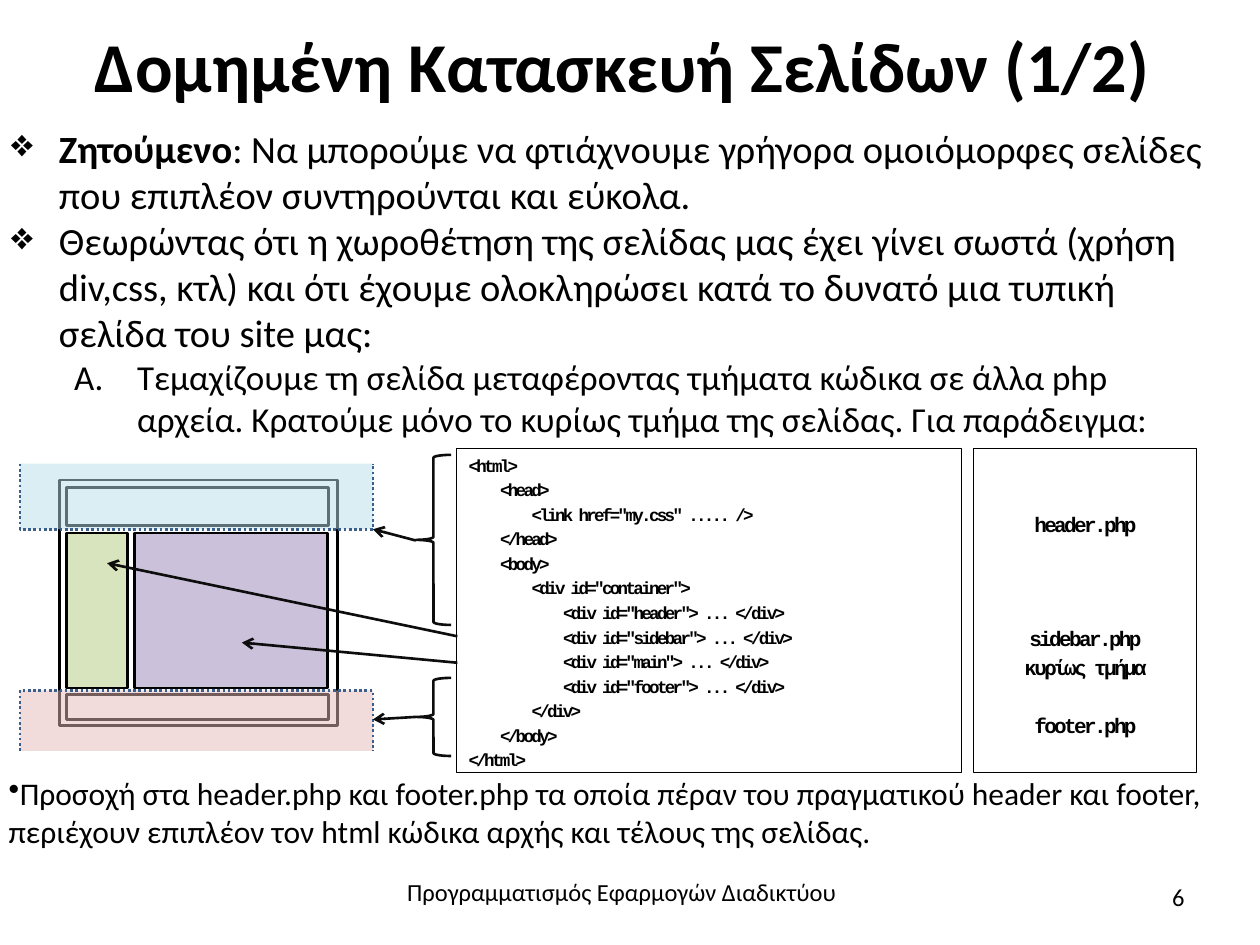
from lxml import etree
from pptx import Presentation
from pptx.dml.color import RGBColor
from pptx.enum.dml import MSO_LINE
from pptx.enum.shapes import MSO_CONNECTOR, MSO_SHAPE
from pptx.enum.text import MSO_ANCHOR, PP_ALIGN
from pptx.oxml.ns import qn
from pptx.util import Inches, Pt

BLACK = RGBColor(0x00, 0x00, 0x00)
WHITE = RGBColor(0xFF, 0xFF, 0xFF)
INK = RGBColor(0x0D, 0x0D, 0x0D)
GREEN = RGBColor(0xD7, 0xE4, 0xBD)
PURPLE = RGBColor(0xCC, 0xC1, 0xDA)
AQUA = RGBColor(0xB7, 0xDE, 0xE8)
ROSE = RGBColor(0xE6, 0xB9, 0xB8)
DOTTED_BLUE = RGBColor(0x3A, 0x5F, 0x8C)

LEFT, CENTER, RIGHT, JUSTIFY = (
    PP_ALIGN.LEFT, PP_ALIGN.CENTER, PP_ALIGN.RIGHT, PP_ALIGN.JUSTIFY)
TOP, MIDDLE = MSO_ANCHOR.TOP, MSO_ANCHOR.MIDDLE
RECTANGLE, LEFT_BRACE = MSO_SHAPE.RECTANGLE, MSO_SHAPE.LEFT_BRACE
STRAIGHT = MSO_CONNECTOR.STRAIGHT
SYSTEM_DOT = MSO_LINE.ROUND_DOT

TEXT_FONT = "Calibri"
CODE_FONT = "Courier New"

CODE = (
    (0, "<html>"),
    (1, "<head>"),
    (2, '<link href="my.css" ..... />'),
    (1, "</head>"),
    (1, "<body>"),
    (2, '<div id="container">'),
    (3, '<div id="header"> ... </div>'),
    (3, '<div id="sidebar"> ... </div>'),
    (3, '<div id="main"> ... </div>'),
    (3, '<div id="footer"> ... </div>'),
    (2, "</div>"),
    (1, "</body>"),
    (0, "</html>"),
)
# File name and the space before it, in points
FILES = (("header.php", 0), ("sidebar.php", 49),
         ("κυρίως τμήμα", 0), ("footer.php", 16.5))


class SlideBuilder:
    line_width = Pt(1.5)
    code_spacing = -150
    code_gap = Pt(2)

    def __init__(self, slide):
        self.slide = slide
        self.shapes = slide.shapes

    def text_box(self, left, top, width, height, anchor=TOP):
        box = self.shapes.add_textbox(
            Inches(left), Inches(top), Inches(width), Inches(height))
        frame = box.text_frame
        frame.word_wrap = True
        frame.vertical_anchor = anchor
        return frame

    def paragraph(self, frame, align=LEFT):
        first = frame.paragraphs[0]
        paragraph = frame.add_paragraph() if first.runs else first
        paragraph.alignment = align
        return paragraph

    def run(self, paragraph, text, size, bold=False, font=TEXT_FONT):
        run = paragraph.add_run()
        run.text = text
        run.font.size = Pt(size)
        run.font.bold = bold
        run.font.name = font
        run.font.color.rgb = BLACK
        return run

    def bullet(self, paragraph, tag, attribute, value, margin=0, indent=0):
        properties = paragraph._p.get_or_add_pPr()
        properties.set("marL", str(Inches(margin)))
        properties.set("indent", str(Inches(indent)))
        etree.SubElement(properties, qn(tag)).set(attribute, value)

    def code_line(self, frame, text, size, align):
        paragraph = self.paragraph(frame, align)
        paragraph.space_after = self.code_gap
        tabs = etree.SubElement(paragraph._p.get_or_add_pPr(), qn("a:tabLst"))
        for step in range(1, 4):
            tab = etree.SubElement(tabs, qn("a:tab"))
            tab.set("pos", str(Inches(0.25 * step)))
            tab.set("algn", "l")
        run = self.run(paragraph, text, size, True, CODE_FONT)
        run.font._element.set("spc", str(self.code_spacing))
        return paragraph

    def shape(self, kind, left, top, width, height, fill=None, line=BLACK,
              line_width=None):
        shape = self.shapes.add_shape(
            kind, Inches(left), Inches(top), Inches(width), Inches(height))
        shape.shadow.inherit = False
        if fill is None:
            shape.fill.background()
        else:
            shape.fill.solid()
            shape.fill.fore_color.rgb = fill
        shape.line.color.rgb = line
        shape.line.width = line_width or self.line_width
        return shape

    def panel(self, left, width):
        shape = self.shape(RECTANGLE, left, 3.56, width, 2.57, WHITE,
                           line_width=Pt(0.5))
        frame = shape.text_frame
        frame.word_wrap = True
        frame.vertical_anchor = TOP
        return frame

    def overlay(self, points, fill):
        start, *rest = [(Inches(x), Inches(y)) for x, y in points]
        builder = self.shapes.build_freeform(*start)
        builder.add_line_segments(rest, close=False)
        shape = builder.convert_to_shape()
        shape.shadow.inherit = False
        shape.fill.solid()
        shape.fill.fore_color.rgb = fill
        color = shape._element.spPr.find(qn("a:solidFill"))[0]
        etree.SubElement(color, qn("a:alpha")).set("val", "50000")
        shape.line.color.rgb = DOTTED_BLUE
        shape.line.width = self.line_width
        shape.line.dash_style = SYSTEM_DOT

    def arrow(self, start, end):
        connector = self.shapes.add_connector(
            STRAIGHT, *(Inches(value) for value in (*start, *end)))
        connector.line.color.rgb = INK
        connector.line.width = self.line_width
        line = connector.line._get_or_add_ln()
        etree.SubElement(line, qn("a:tailEnd")).set("type", "arrow")
        etree.SubElement(connector._element.spPr, qn("a:effectLst"))


def main():
    presentation = Presentation()
    presentation.slide_width = Inches(10)
    presentation.slide_height = Inches(7.5)
    slide = presentation.slides.add_slide(presentation.slide_layouts[6])
    builder = SlideBuilder(slide)

    # Title
    title = builder.text_box(0.5, 0, 9, 1.03, MIDDLE)
    builder.run(builder.paragraph(title, CENTER),
                "Δομημένη Κατασκευή Σελίδων (1/2) ", 40, True)

    # Main points
    body = builder.text_box(-0.01, 0.94, 9.8, 2.93)
    goal = builder.paragraph(body)
    builder.bullet(goal, "a:buChar", "char", "❖", 0.38, -0.38)
    builder.run(goal, "Ζητούμενο", 22, True)
    builder.run(goal, ": Να μπορούμε να φτιάχνουμε γρήγορα ομοιόμορφες σελίδες "
                "που επιπλέον συντηρούνται και εύκολα.", 22)
    premise = builder.paragraph(body)
    builder.bullet(premise, "a:buChar", "char", "❖", 0.38, -0.38)
    builder.run(premise, "Θεωρώντας ότι η χωροθέτηση της σελίδας μας έχει γίνει "
                "σωστά (χρήση div,css, κτλ) και ότι έχουμε ολοκληρώσει κατά το "
                "δυνατό μια τυπική σελίδα του site μας:", 22)
    step = builder.paragraph(body)
    step.level = 1
    builder.bullet(step, "a:buAutoNum", "type", "alphaUcPeriod", 1, -0.5)
    builder.run(step, "Τεμαχίζουμε τη σελίδα μεταφέροντας τμήματα κώδικα σε άλλα "
                "php αρχεία. Κρατούμε μόνο το κυρίως τμήμα της σελίδας. "
                "Για παράδειγμα:", 20)

    # Closing remark
    remark = builder.paragraph(builder.text_box(-0.03, 6.09, 9.79, 0.71, MIDDLE))
    builder.bullet(remark, "a:buChar", "char", "•")
    builder.run(remark, "Προσοχή στα header.php και footer.php τα οποία πέραν του "
                "πραγματικού header και footer, περιέχουν επιπλέον τον html "
                "κώδικα αρχής και τέλους της σελίδας.", 18)

    # Page layout: container, header, footer, sidebar, main
    for left, top, width, height, fill in (
            (0.47, 3.81, 2.21, 1.95, WHITE),
            (0.53, 3.87, 2.08, 0.3, WHITE),
            (0.53, 5.51, 2.08, 0.2, WHITE),
            (0.53, 4.23, 0.48, 1.23, GREEN),
            (1.07, 4.23, 1.53, 1.23, PURPLE)):
        builder.shape(RECTANGLE, left, top, width, height, fill)

    # Page source
    code = builder.panel(3.62, 4.01)
    for depth, text in CODE:
        builder.code_line(code, "\t" * depth + text, 10, JUSTIFY)

    # Parts moved to the header and footer files
    for outer, inner, fill in ((3.68, 4.2, AQUA), (5.96, 5.48, ROSE)):
        builder.overlay(((0.16, outer), (0.16, inner),
                         (2.96, inner), (2.96, outer)), fill)

    # Braces and arrows from the code to the layout
    for top, height in ((3.61, 1.35), (5.38, 0.62)):
        builder.shape(LEFT_BRACE, 3.3, top, 0.28, height, line=INK)
    for start, end in (((3.3, 4.29), (2.96, 4.2)),
                       ((3.3, 5.69), (2.96, 5.71)),
                       ((3.63, 5.05), (0.85, 4.47)),
                       ((3.63, 5.26), (1.92, 5.1))):
        builder.arrow(start, end)

    # File names beside the code
    files = builder.panel(7.73, 1.77)
    files.margin_top = Inches(0.5)
    for name, gap in FILES:
        paragraph = builder.code_line(files, name, 12, CENTER)
        if gap:
            paragraph.space_before = Pt(gap)

    # Footer and slide number
    footer = builder.text_box(2.61, 6.91, 4.65, 0.55)
    builder.run(builder.paragraph(footer, CENTER),
                "Προγραμματισμός Εφαρμογών Διαδικτύου", 14)
    number = builder.text_box(7.17, 6.95, 2.33, 0.4)
    builder.run(builder.paragraph(number, RIGHT), "6", 14)

    presentation.save("out.pptx")


if __name__ == "__main__":
    main()
